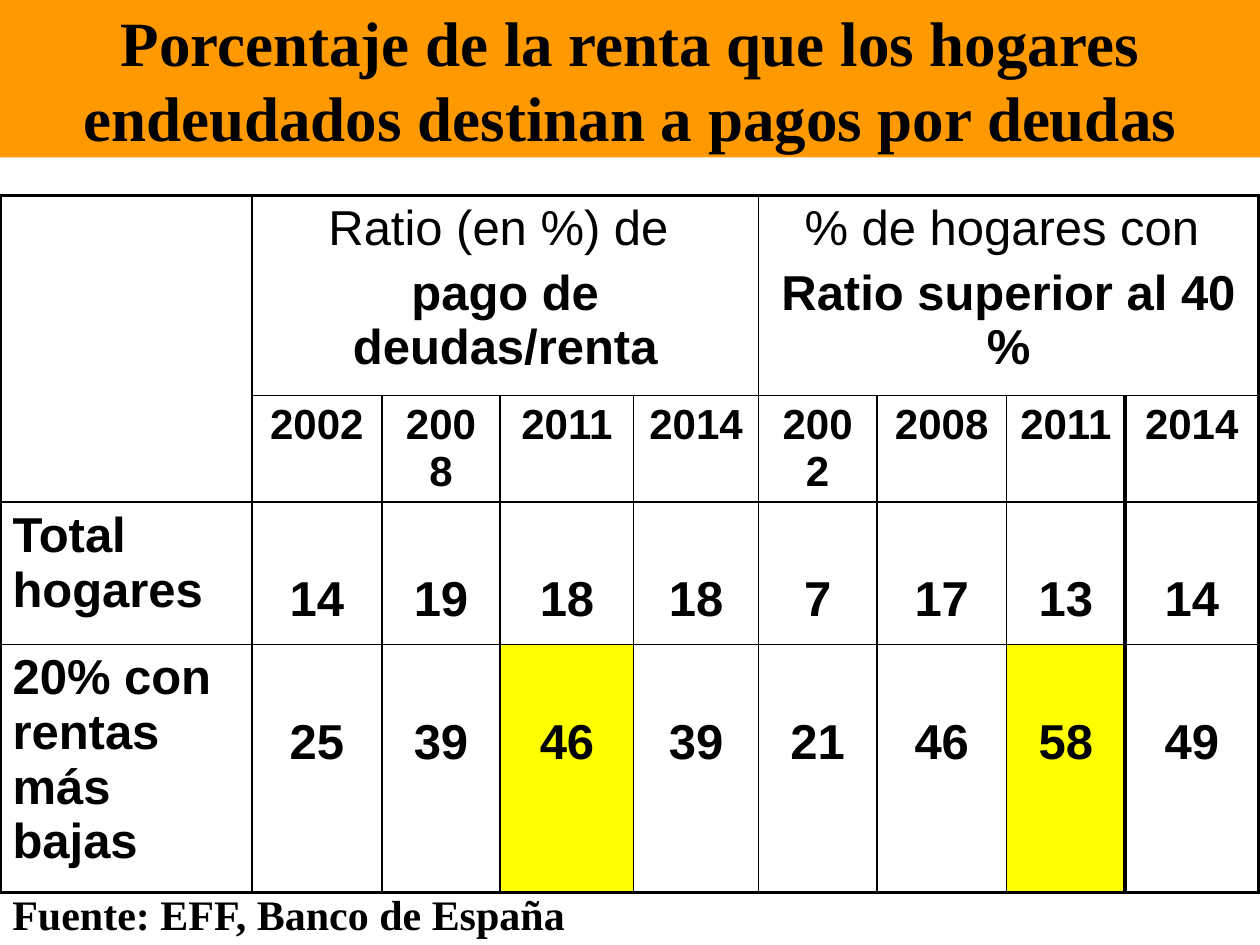
"""Build a slide on the share of income that indebted households pay on debt."""
from pptx import Presentation, util as u
from pptx.dml.color import RGBColor
from pptx.enum import shapes, text
from pptx.oxml import parse_xml
from pptx.oxml.ns import nsdecls

WIDE, HIGH = 10, 7.5
SERIF, SANS = "Times New Roman", "Arial"
BLACK, WHITE, GOLD, ORANGE = "000000", "FFFFFF", "FFFF00", "FF9900"
COLS = [2, 1.03, 0.94, 1.06, 0.99, 0.94, 1.03, 0.94, 1.06]
ROWS = [1.59, 0.63, 1.13, 1.97]
HEADS = {
    1: ["Ratio (en %) de ", "pago de deudas/renta"],
    5: ["% de hogares con ", "Ratio superior al 40 %"],
}
YEARS = ["2002", "2008", "2011", "2014"] * 2
DATA = {
    "Total hogares": [14, 19, 18, 18, 7, 17, 13, 14],
    "20% con rentas más bajas": [25, 39, 46, 39, 21, 46, 58, 49],
}
MARKED = {(3, 3), (3, 7)}
THIN, THICK = 1, 2.25


def paint(fill, tone):
    """Fill with one solid colour."""
    fill.solid()
    fill.fore_color.rgb = RGBColor.from_string(tone)


def style(para, size, face, bold=True, align=text.PP_ALIGN.CENTER):
    """Set the font and alignment of a paragraph."""
    font = para.font
    font.size, font.name, font.bold = u.Pt(size), face, bold
    font.color.rgb = RGBColor.from_string(BLACK)
    para.alignment = align


def banner(slide, words):
    """Add the filled title band across the top."""
    band = slide.shapes.add_shape(
        shapes.MSO_SHAPE.RECTANGLE, 0, 0, u.Inches(WIDE), u.Inches(HIGH / 6))
    band.shadow.inherit = False
    paint(band.fill, ORANGE)
    band.line.fill.background()
    frame = band.text_frame
    frame.word_wrap = True
    frame.vertical_anchor = text.MSO_ANCHOR.MIDDLE
    frame.text = words
    style(frame.paragraphs[0], 36, SERIF)


def source(slide, words):
    """Add the source line at the foot."""
    box = slide.shapes.add_textbox(
        0, u.Inches(7), u.Inches(4.76), u.Inches(0.5))
    frame = box.text_frame
    frame.word_wrap = True
    frame.text = words
    style(frame.paragraphs[0], 24, SERIF, align=text.PP_ALIGN.LEFT)


def edge(cell, row, col):
    """Rule a cell, thick at the rim and before the last year."""
    end, low = col + cell.span_width, row + cell.span_height
    rims = {0, len(COLS)} | ({len(COLS) - 1} if row else set())
    thick = {"L": col in rims, "R": end in rims,
             "T": row == 0, "B": low == len(ROWS)}
    props = cell._tc.get_or_add_tcPr()
    for side, heavy in thick.items():
        width = u.Pt(THICK if heavy else THIN)
        props.append(parse_xml(
            f'<a:ln{side} {nsdecls("a")} w="{width}"><a:solidFill>'
            f'<a:srgbClr val="{BLACK}"/></a:solidFill></a:ln{side}>'))


def write(cell, lines, size=28, align=text.PP_ALIGN.CENTER, top=0.05):
    """Write lines in a cell, the last one bold."""
    cell.margin_top = u.Inches(top)
    cell.text = "\n".join(lines)
    paras = cell.text_frame.paragraphs
    for i, para in enumerate(paras, 1):
        style(para, size, SANS, i == len(paras), align)
        para.space_before = u.Pt(size / 5)


def table(slide):
    """Add the table of ratios by group and year."""
    grid = slide.shapes.add_table(
        len(ROWS), len(COLS), 0, u.Inches(1.55),
        u.Inches(sum(COLS)), u.Inches(sum(ROWS))).table
    grid.first_row = grid.horz_banding = False
    for col, size in zip(grid.columns, COLS):
        col.width = u.Inches(size)
    for row, size in zip(grid.rows, ROWS):
        row.height = u.Inches(size)
    grid.cell(0, 0).merge(grid.cell(1, 0))
    for c, lines in HEADS.items():
        grid.cell(0, c).merge(grid.cell(0, c + 3))
        write(grid.cell(0, c), lines)
    for c, year in enumerate(YEARS, 1):
        write(grid.cell(1, c), [year], 24)
    for r, (name, nums) in enumerate(DATA.items(), 2):
        write(grid.cell(r, 0), [name], align=text.PP_ALIGN.LEFT)
        for c, num in enumerate(nums, 1):
            write(grid.cell(r, c), [str(num)], top=0.56)
    for r in range(len(ROWS)):
        for c in range(len(COLS)):
            cell = grid.cell(r, c)
            if not cell.is_spanned:
                edge(cell, r, c)
            paint(cell.fill, GOLD if (r, c) in MARKED else WHITE)


def main():
    """Build and save the slide."""
    deck = Presentation()
    deck.slide_width, deck.slide_height = u.Inches(WIDE), u.Inches(HIGH)
    slide = deck.slides.add_slide(deck.slide_layouts[6])
    banner(slide, "Porcentaje de la renta que los hogares "
                  "endeudados destinan a pagos por deudas")
    table(slide)
    source(slide, "Fuente: EFF, Banco de España")
    deck.save("out.pptx")


if __name__ == "__main__":
    main()
